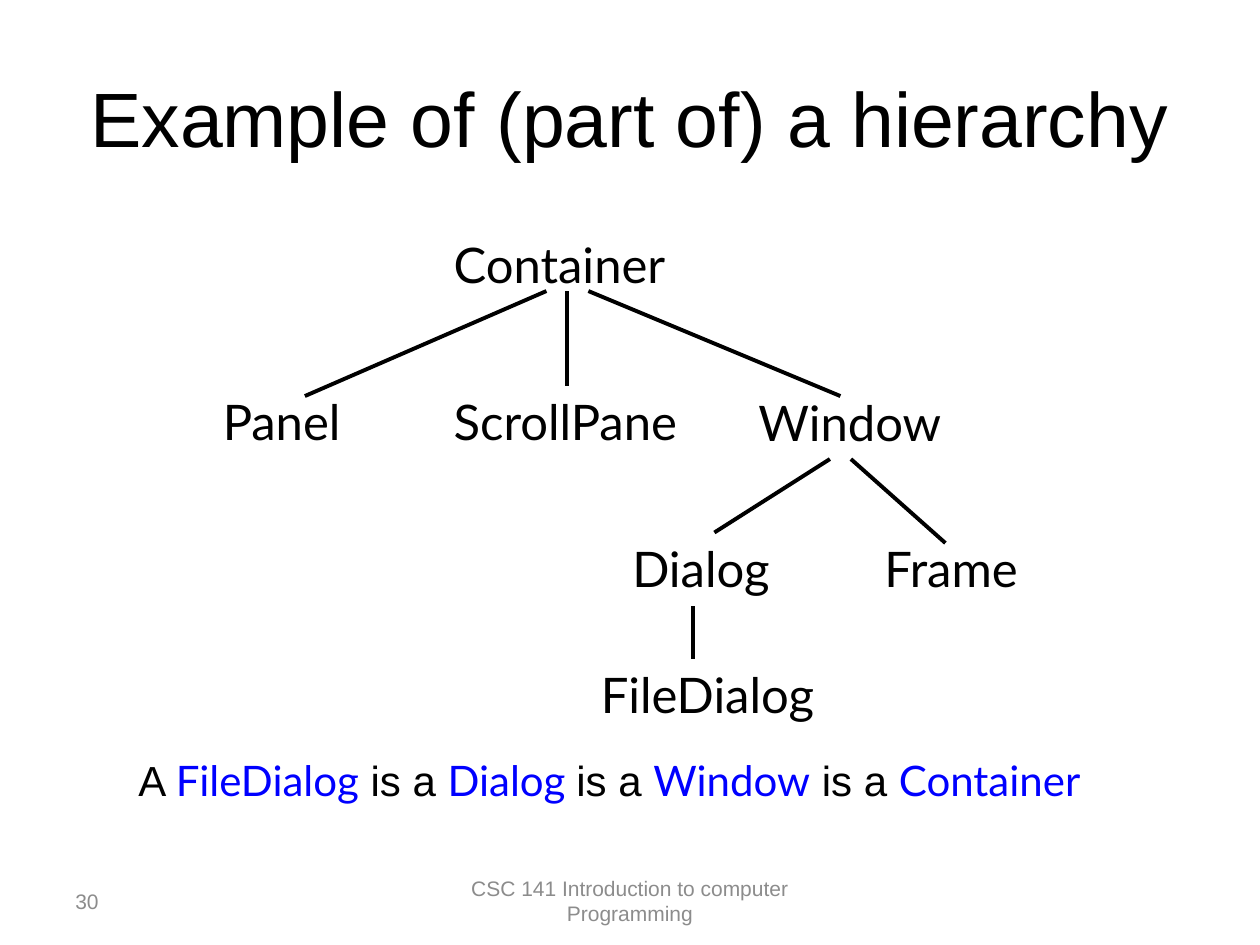
from collections import namedtuple

from lxml.etree import SubElement
from pptx import Presentation
from pptx.dml.color import RGBColor
from pptx.enum.shapes import MSO_CONNECTOR as Connector
from pptx.enum.text import MSO_ANCHOR as Anchor, PP_ALIGN as Align
from pptx.oxml.ns import qn
from pptx.util import Inches, Pt

Box = namedtuple("Box", "left top width height")

SANS, CODE = "Arial", "Lato"
BLACK, BLUE, GREY = "000000", "0000FF", "8C8C8C"
CELL = 1 / 12  # the tree's grid has twelve columns and rows to the inch

# Class name: column, row, columns wide
CLASSES = {
    "Container": (22, 0, 36),
    "Panel": (0, 15, 16),
    "ScrollPane": (22, 15, 25),
    "Window": (51, 15.12, 20),
    "Dialog": (39, 29, 17),
    "Frame": (63, 29, 17),
    "FileDialog": (36, 41, 25),
}
LABEL_ROWS = 6.84

# Start column and row, end column and row
BRANCHES = [
    (32, 6, 9, 16),
    (34, 6, 34, 15),
    (36, 6, 60, 16),
    (59, 22, 48, 29),
    (61, 22, 70, 30),
    (46, 36, 46, 41),
]

SENTENCE = [
    ("A ", False), ("FileDialog", True), (" is a ", False), ("Dialog ", True),
    ("is a ", False), ("Window", True), (" is a ", False), ("Container", True),
]


def color(hex_string):
    return RGBColor.from_string(hex_string)


def add_para(page, box, size, anchor=Anchor.TOP, align=Align.LEFT):
    """Add a wrapping text box and return its only paragraph."""
    frame = page.shapes.add_textbox(*map(Inches, box)).text_frame
    frame.word_wrap = True
    frame.vertical_anchor = anchor
    para = frame.paragraphs[0]
    para.alignment = align
    para.font.size = Pt(size)
    return para


def add_text(page, box, text, size, font=SANS, hex_string=BLACK, **layout):
    para = add_para(page, box, size, **layout)
    para.add_run().text = text
    para.font.name = font
    para.font.color.rgb = color(hex_string)


def add_title(page, box):
    add_text(page, box, "Example of (part of) a hierarchy", 44,
             anchor=Anchor.MIDDLE, align=Align.CENTER)


def add_tree(page, box):
    def across(column):
        return box.left + column * CELL

    def down(row):
        return box.top + row * CELL

    # Class names
    for name, (column, row, columns) in CLASSES.items():
        label = Box(across(column), down(row), columns * CELL, LABEL_ROWS * CELL)
        add_text(page, label, name, 28, CODE)

    # Branches
    for column, row, end_column, end_row in BRANCHES:
        ends = across(column), down(row), across(end_column), down(end_row)
        branch = page.shapes.add_connector(Connector.STRAIGHT, *map(Inches, ends))
        branch.line.color.rgb = color(BLACK)
        branch.line.width = Pt(2.25)
        SubElement(branch.element.spPr, qn("a:effectLst"))


def add_sentence(page, box):
    para = add_para(page, box, 24)
    for text, is_class in SENTENCE:
        span = para.add_run()
        span.text = text
        span.font.name = CODE if is_class else SANS
        span.font.color.rgb = color(BLUE if is_class else BLACK)


def add_footer(page, box):
    number = Box(box.left, box.top, 2.33, box.height)
    add_text(page, number, "30", 12, hex_string=GREY, anchor=Anchor.MIDDLE)
    width = 3.17
    course = Box(box.left + (box.width - width) / 2, box.top, width, box.height)
    add_text(page, course, "CSC 141 Introduction to computer Programming", 12,
             hex_string=GREY, anchor=Anchor.MIDDLE, align=Align.CENTER)


def main():
    deck = Presentation()
    deck.slide_width, deck.slide_height = Inches(10), Inches(7.5)
    page = deck.slides.add_slide(deck.slide_layouts[6])
    add_title(page, Box(0.5, 0.3, 9, 1.25))
    add_tree(page, Box(1.67, 1.81, 6.67, 4))
    add_sentence(page, Box(1, 5.94, 8.42, 0.5))
    add_footer(page, Box(0.5, 6.95, 9, 0.4))
    deck.save("out.pptx")


if __name__ == "__main__":
    main()
